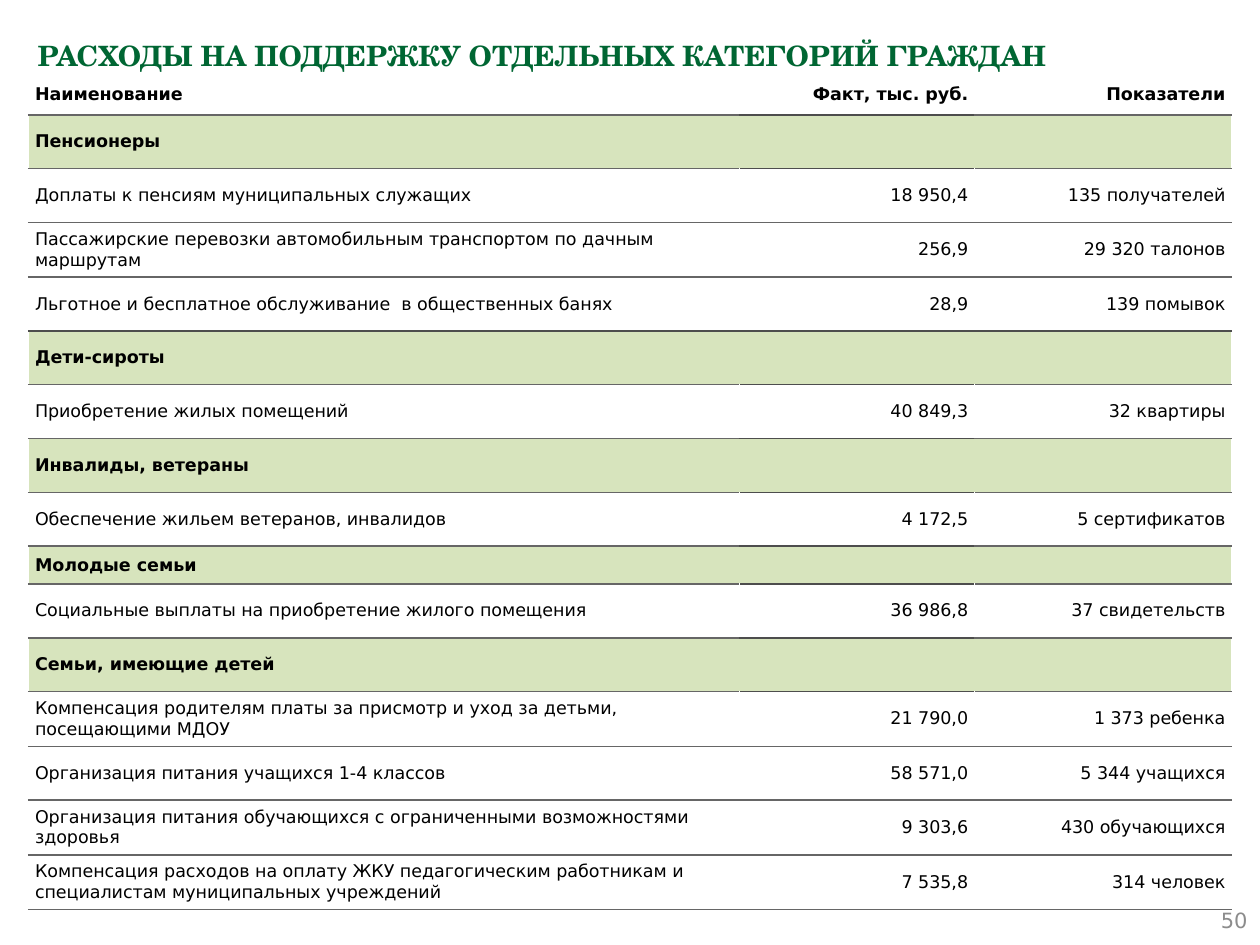
"""Build a slide with a table of spending on support for groups of citizens."""
from dataclasses import dataclass

from lxml import etree
from pptx import Presentation
from pptx.dml.color import RGBColor
from pptx.enum.text import MSO_ANCHOR, PP_ALIGN
from pptx.oxml.ns import qn
from pptx.util import Pt

LEFT, RIGHT = PP_ALIGN.LEFT, PP_ALIGN.RIGHT
TOP, MIDDLE = MSO_ANCHOR.TOP, MSO_ANCHOR.MIDDLE


@dataclass(frozen=True)
class Theme:
    """Hold the fonts, colours and sizes."""
    serif: str = "TeX Gyre Schola"
    sans: str = "DejaVu Sans"
    green: str = "006633"
    black: str = "000000"
    gray: str = "8C8C8C"
    white: str = "FFFFFF"
    band: str = "D7E4BD"
    rule: str = "666666"
    dark: str = "4D4D4D"
    head: int = 16
    body: int = 10
    foot: int = 12


THEME = Theme()
WIDTHS = (406.2, 134.2, 147)
HEAD_H, ROW_H, LOW_H = 21.1, 30.75, 21.7
LOW_ROW = 9
DARK_ROW = 4
ROWS = (
    ("Наименование", "Факт, тыс. руб.", "Показатели"),
    ("Пенсионеры",),
    ("Доплаты к пенсиям муниципальных служащих", "18 950,4", "135 получателей"),
    ("Пассажирские перевозки автомобильным транспортом по дачным маршрутам",
     "256,9", "29 320 талонов"),
    ("Льготное и бесплатное обслуживание  в общественных банях",
     "28,9", "139 помывок"),
    ("Дети-сироты",),
    ("Приобретение жилых помещений", "40 849,3", "32 квартиры"),
    ("Инвалиды, ветераны",),
    ("Обеспечение жильем ветеранов, инвалидов", "4 172,5", "5 сертификатов"),
    ("Молодые семьи",),
    ("Социальные выплаты на приобретение жилого помещения",
     "36 986,8", "37 свидетельств"),
    ("Семьи, имеющие детей",),
    ("Компенсация родителям платы за присмотр и уход за детьми, посещающими МДОУ",
     "21 790,0", "1 373 ребенка"),
    ("Организация питания учащихся 1-4 классов", "58 571,0", "5 344 учащихся"),
    ("Организация питания обучающихся с ограниченными возможностями здоровья",
     "9 303,6", "430 обучающихся"),
    ("Компенсация расходов на оплату ЖКУ педагогическим работникам и "
     "специалистам муниципальных учреждений", "7 535,8", "314 человек"),
)


def add_run(para, text, font, size, color, bold=False):
    """Add one styled run to a paragraph."""
    run = para.add_run()
    run.text = text
    run.font.name = font
    run.font.size = Pt(size)
    run.font.bold = bold
    run.font.color.rgb = RGBColor.from_string(color)


def add_text(slide, box, anchor, align):
    """Add a wrapped text box and return its paragraph."""
    frame = slide.shapes.add_textbox(*map(Pt, box)).text_frame
    frame.word_wrap = True
    frame.vertical_anchor = anchor
    para = frame.paragraphs[0]
    para.alignment = align
    return para


def is_band(row):
    """Tell whether a row is a group heading."""
    return row < len(ROWS) and len(ROWS[row]) == 1


def rule_color(row, col):
    """Give the colour of the line under a cell."""
    if row < 0:
        return THEME.white
    near = col == 1 and (is_band(row) or is_band(row + 1))
    return THEME.dark if near or row == DARK_ROW else THEME.rule


def add_edge(cell, side, color):
    """Draw one cell border, or hide it if there is no colour."""
    line = etree.SubElement(cell._tc.get_or_add_tcPr(), qn(f"a:ln{side}"), w=str(Pt(1)))
    if color is None:
        etree.SubElement(line, qn("a:noFill"))
    else:
        fill = etree.SubElement(line, qn("a:solidFill"))
        etree.SubElement(fill, qn("a:srgbClr"), val=color)


def fill_cell(cell, row, col):
    """Set the text, borders and fill of a cell."""
    band = is_band(row)
    cell.margin_left = cell.margin_right = Pt(3.6)
    cell.margin_top = cell.margin_bottom = Pt(3.6)
    cell.vertical_anchor = MIDDLE if row else TOP
    para = cell.text_frame.paragraphs[0]
    para.alignment = RIGHT if col else LEFT
    if col < len(ROWS[row]):
        add_run(para, ROWS[row][col], THEME.sans, THEME.body, THEME.black,
                band or row == 0)
    else:
        para._p.get_or_add_endParaRPr().set("sz", str(THEME.body * 100))
    last = len(WIDTHS) - 1
    add_edge(cell, "L", None if band and col > 0 else THEME.white)
    add_edge(cell, "R", None if band and col < last else THEME.white)
    add_edge(cell, "T", rule_color(row - 1, col))
    add_edge(cell, "B", rule_color(row, col))
    if band:
        cell.fill.solid()
        cell.fill.fore_color.rgb = RGBColor.from_string(THEME.band)
    else:
        cell.fill.background()


def add_grid(slide, left, top):
    """Add the table of spending."""
    tall = [ROW_H] * len(ROWS)
    tall[0], tall[LOW_ROW] = HEAD_H, LOW_H
    size = (left, top, sum(WIDTHS), sum(tall))
    grid = slide.shapes.add_table(len(ROWS), len(WIDTHS), *map(Pt, size)).table
    grid.first_row = grid.horz_banding = False
    for col, width in enumerate(WIDTHS):
        grid.columns[col].width = Pt(width)
    for row, height in enumerate(tall):
        grid.rows[row].height = Pt(height)
        for col in range(len(WIDTHS)):
            fill_cell(grid.cell(row, col), row, col)


def main():
    """Build and save the slide."""
    deck = Presentation()
    deck.slide_width, deck.slide_height = Pt(720), Pt(540)
    slide = deck.slides.add_slide(deck.slide_layouts[6])
    title = add_text(slide, (14.4, 14.4, 692, 56.9), TOP, LEFT)
    title.line_spacing = 1.2
    add_run(title, "РАСХОДЫ НА ПОДДЕРЖКУ ОТДЕЛЬНЫХ КАТЕГОРИЙ ГРАЖДАН",
            THEME.serif, THEME.head, THEME.green, True)
    page = add_text(slide, (552, 511.2, 168, 28.8), MIDDLE, RIGHT)
    add_run(page, "50", THEME.sans, THEME.foot, THEME.gray)
    add_grid(slide, 16.4, 44.6)
    deck.save("out.pptx")


if __name__ == "__main__":
    main()
